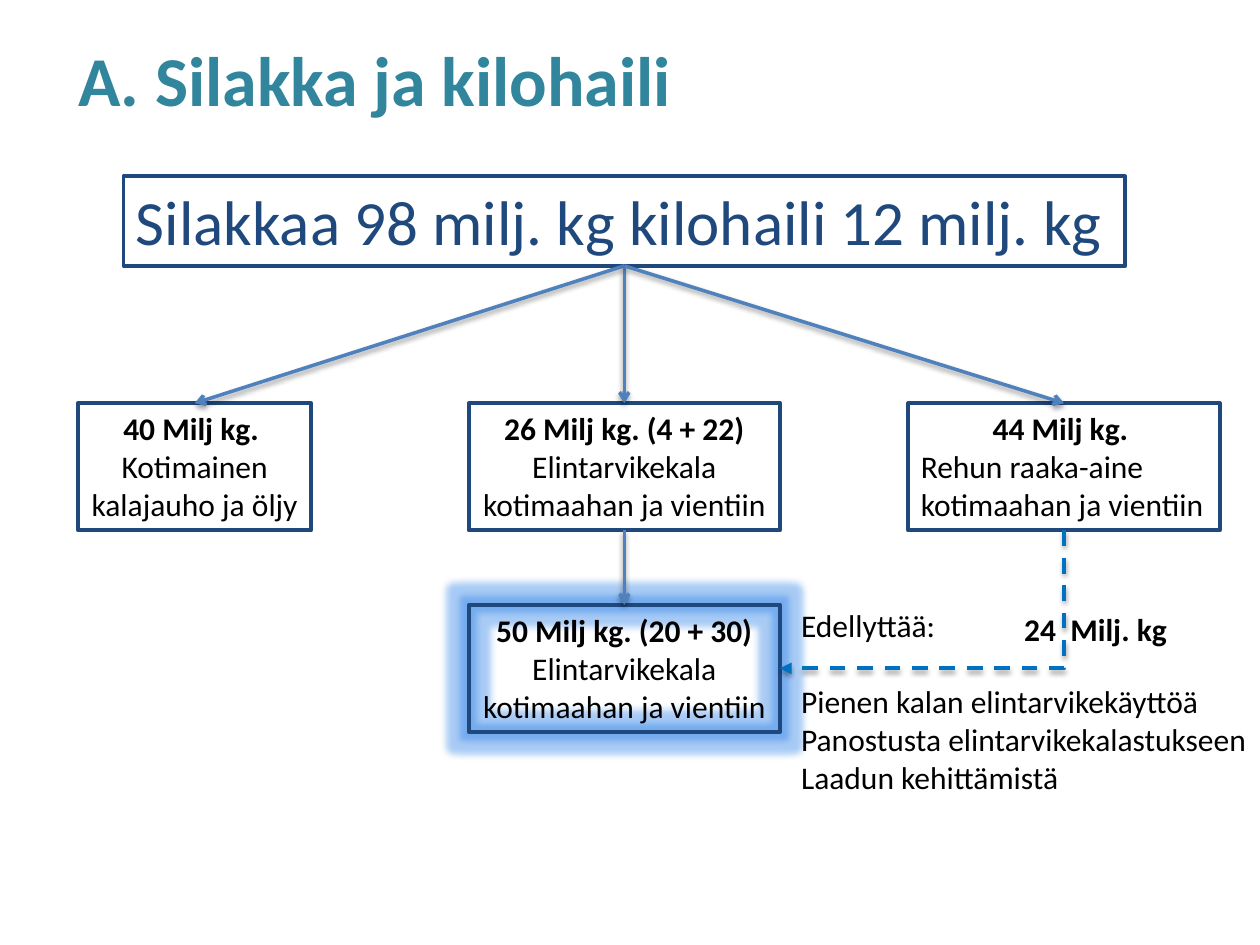
from dataclasses import dataclass

from lxml import etree
from pptx import Presentation
from pptx.dml.color import RGBColor
from pptx.enum.dml import MSO_LINE
from pptx.enum.shapes import MSO_CONNECTOR, MSO_SHAPE
from pptx.enum.text import MSO_ANCHOR, MSO_AUTO_SIZE, PP_ALIGN
from pptx.oxml import parse_xml
from pptx.oxml.ns import nsdecls, qn
from pptx.util import Inches, Pt

RECTANGLE = MSO_SHAPE.RECTANGLE
STRAIGHT, ELBOW = MSO_CONNECTOR.STRAIGHT, MSO_CONNECTOR.ELBOW
LEFT, CENTER = PP_ALIGN.LEFT, PP_ALIGN.CENTER
TOP = MSO_ANCHOR.TOP
FIT_SHAPE = MSO_AUTO_SIZE.SHAPE_TO_FIT_TEXT
DASH = MSO_LINE.DASH
TOP_SIDE, BOTTOM_SIDE, RIGHT_SIDE = 0, 2, 3


@dataclass(frozen=True)
class Theme:
    font: str = "Calibri"
    title: RGBColor = RGBColor(0x31, 0x85, 0x9C)
    navy: RGBColor = RGBColor(0x1F, 0x49, 0x7D)
    arrow: RGBColor = RGBColor(0x4F, 0x81, 0xBD)
    dashed: RGBColor = RGBColor(0x00, 0x70, 0xC0)
    text: RGBColor = RGBColor(0, 0, 0)
    title_size: int = 40
    total_size: int = 36
    body_size: int = 18
    border: float = 2.25
    arrow_width: float = 2


THEME = Theme()
TIER_ONE, TIER_TWO = 3.2, 4.8
BOX_HEIGHT, WIDE_BOX = 1.01, 2.47
MIDDLE_LEFT = 3.72


def add_span(para, text, size, color, bold=False):
    span = para.add_run()
    span.text = text
    span.font.name = THEME.font
    span.font.size = Pt(size)
    span.font.bold = bold
    span.font.color.rgb = color


def write_lines(box, lines, size=THEME.body_size, color=THEME.text):
    """Fill a box from (text, alignment, bold) lines."""
    frame = box.text_frame
    frame.word_wrap = False
    frame.auto_size = FIT_SHAPE
    frame.vertical_anchor = TOP
    for index, (text, alignment, bold) in enumerate(lines):
        para = frame.add_paragraph() if index else frame.paragraphs[0]
        para.alignment = alignment
        add_span(para, text, size, color, bold)
    return frame


def add_title(page, text):
    title = page.shapes.title
    title.left, title.top = Inches(0.52), Inches(0.29)
    title.width, title.height = Inches(9.68), Inches(1.25)
    frame = title.text_frame
    frame.vertical_anchor = TOP
    frame.margin_top = 0
    para = frame.paragraphs[0]
    para.alignment = LEFT
    add_span(para, text, THEME.title_size, THEME.title, bold=True)


def add_frame(page, left, top, width, height):
    box = page.shapes.add_shape(
        RECTANGLE, Inches(left), Inches(top), Inches(width), Inches(height))
    box.shadow.inherit = False
    box.fill.background()
    box.line.color.rgb = THEME.navy
    box.line.width = Pt(THEME.border)
    return box


def add_amount_box(page, left, top, width, amount, uses, alignment=CENTER):
    box = add_frame(page, left, top, width, BOX_HEIGHT)
    write_lines(box, [(amount, CENTER, True)]
                + [(use, alignment, False) for use in uses])
    return box


def add_note(page, left, top, width, height, lines):
    box = page.shapes.add_textbox(
        Inches(left), Inches(top), Inches(width), Inches(height))
    return write_lines(box, lines)


def add_glow(box):
    effects = box._element.spPr.find(qn("a:effectLst"))
    effects.append(parse_xml(
        f'<a:glow {nsdecls("a")} rad="101600"><a:srgbClr val="{THEME.arrow}">'
        '<a:satMod val="175000"/><a:alpha val="40000"/></a:srgbClr></a:glow>'))


def add_arrow(page, source, target, kind=STRAIGHT, target_side=TOP_SIDE,
              color=THEME.arrow, width=THEME.arrow_width, head="arrow", dash=None):
    """Join the bottom of source to a side of target."""
    arrow = page.shapes.add_connector(kind, 0, 0, 0, 0)
    arrow.begin_connect(source, BOTTOM_SIDE)
    arrow.end_connect(target, target_side)
    arrow.line.color.rgb = color
    arrow.line.width = Pt(width)
    if dash:
        arrow.line.dash_style = dash
    properties = arrow._element.spPr
    etree.SubElement(properties.find(qn("a:ln")), qn("a:tailEnd"), type=head)
    properties.append(parse_xml(
        f'<a:effectLst {nsdecls("a")}><a:outerShdw blurRad="40000" dist="20000" '
        'dir="5400000" rotWithShape="0"><a:srgbClr val="000000">'
        '<a:alpha val="38000"/></a:srgbClr></a:outerShdw></a:effectLst>'))
    return arrow


def bend_down_then_left(arrow):
    """Turn an elbow into a single corner: down first, then left."""
    across = abs(arrow.end_x - arrow.begin_x)
    down = abs(arrow.end_y - arrow.begin_y)
    center_x = (arrow.begin_x + arrow.end_x) // 2
    center_y = (arrow.begin_y + arrow.end_y) // 2
    properties = arrow._element.spPr
    properties.find(qn("a:prstGeom")).set("prst", "bentConnector2")
    transform = properties.find(qn("a:xfrm"))
    transform.attrib.clear()
    transform.set("rot", "5400000")
    arrow.left, arrow.top = center_x - down // 2, center_y - across // 2
    arrow.width, arrow.height = down, across


def main():
    deck = Presentation()
    deck.slide_width, deck.slide_height = Inches(10), Inches(7.5)
    page = deck.slides.add_slide(deck.slide_layouts[5])
    add_title(page, "A. Silakka ja kilohaili")

    total = add_frame(page, 0.98, 1.4, 7.95, 0.71)
    write_lines(total, [("Silakkaa 98 milj. kg kilohaili 12 milj. kg", LEFT, False)],
                THEME.total_size, THEME.navy)

    food_uses = ["Elintarvikekala", "kotimaahan ja vientiin"]
    meal = add_amount_box(page, 0.62, TIER_ONE, 1.85, "40 Milj kg. ",
                          ["Kotimainen", "kalajauho ja öljy"])
    food = add_amount_box(page, MIDDLE_LEFT, TIER_ONE, WIDE_BOX,
                          "26 Milj kg. (4 + 22)", food_uses)
    feed = add_amount_box(page, 7.21, TIER_ONE, WIDE_BOX, "44 Milj kg. ",
                          ["Rehun raaka-aine", "kotimaahan ja vientiin"], LEFT)
    goal = add_amount_box(page, MIDDLE_LEFT, TIER_TWO, WIDE_BOX,
                          "50 Milj kg. (20 + 30)", food_uses)
    add_glow(goal)

    for source, target in ((total, meal), (total, food), (total, feed), (food, goal)):
        add_arrow(page, source, target)
    transfer = add_arrow(page, feed, goal, ELBOW, RIGHT_SIDE, THEME.dashed,
                         THEME.border, "triangle", DASH)
    bend_down_then_left(transfer)

    needs = add_note(page, 6.26, 4.76, 3.77, 1.61, [
        (text, LEFT, False) for text in (
            "Edellyttää:", "Pienen kalan elintarvikekäyttöä",
            "Panostusta elintarvikekalastukseen", "Laadun kehittämistä")])
    needs.paragraphs[1].space_before = Pt(22)
    add_note(page, 8.03, 4.79, 1.35, 0.4, [("24  Milj. kg", LEFT, True)])

    deck.save("out.pptx")


if __name__ == "__main__":
    main()
